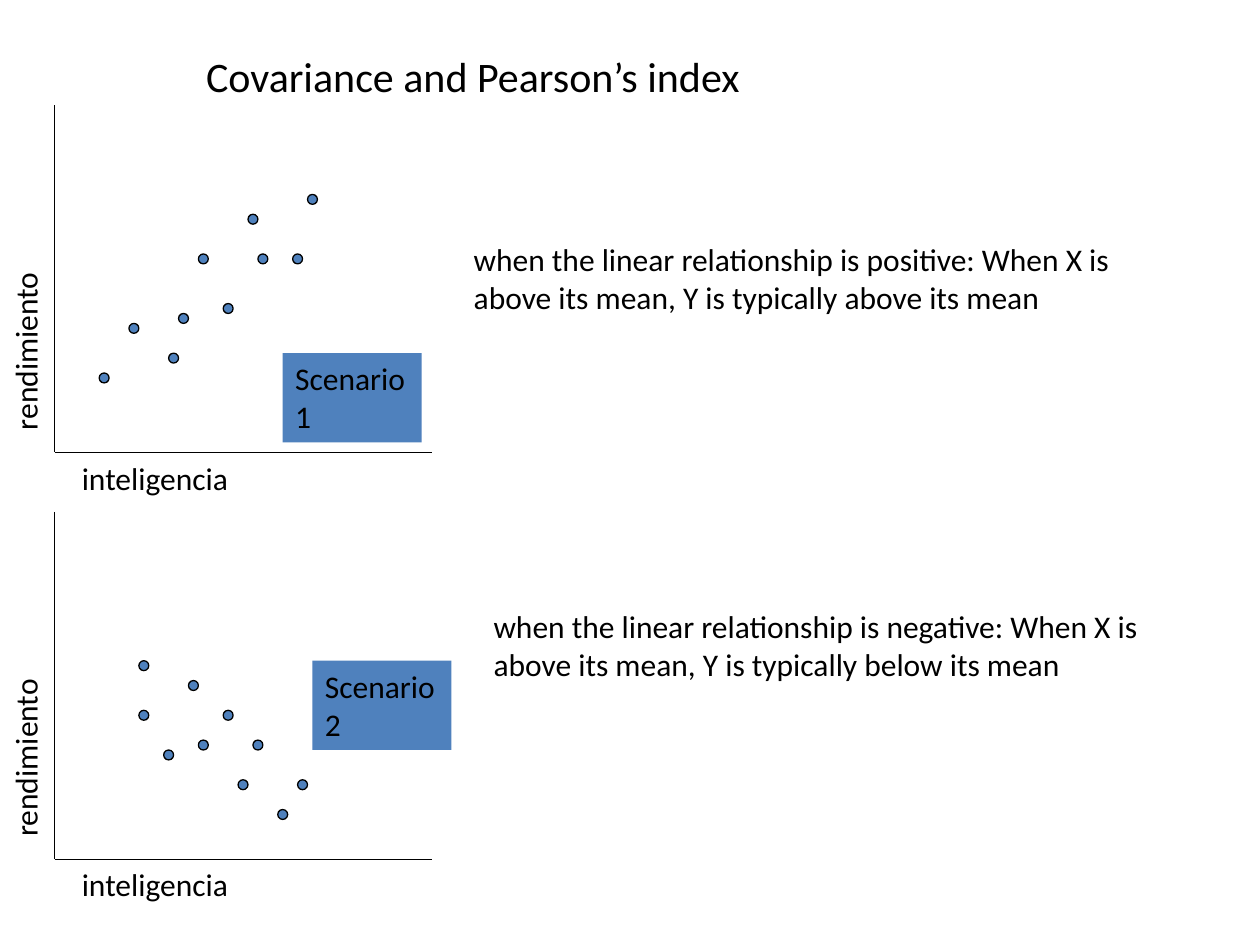
from dataclasses import dataclass
from pptx import Presentation
from pptx.dml.color import RGBColor
from pptx.enum import shapes, text
from pptx.oxml.ns import qn
from pptx import util as u


@dataclass(frozen=True)
class Theme:
    """Colours, font and sizes."""
    font: str = "Calibri"
    head: int = 24
    body: int = 18
    line: float = 0.75
    ink: RGBColor = RGBColor(0, 0, 0)
    fill: RGBColor = RGBColor(0x4F, 0x81, 0xBD)


THEME = Theme()
WIDE, HIGH = u.Inches(10), u.Inches(7.5)
CELL = WIDE / 127
LEFT = 5.5

PLOTS = [
    dict(base=45.6, tag=("Scenario 1", 23, 10), note=(
        "when the linear relationship is positive: When X is above its mean, "
        "Y is typically above its mean", 41, 22),
        dots=[(5, 7.5), (8, 12.5), (12, 9.5), (13, 13.5), (15, 19.5),
              (17.5, 14.5), (20, 23.5), (21, 19.5), (24.5, 19.5), (26, 25.5)]),
    dict(base=86.6, tag=("Scenario 2", 26, 20), note=(
        "when the linear relationship is negative: When X is above its mean, "
        "Y is typically below its mean", 43, 26),
        dots=[(9, 14.5), (9, 19.5), (11.5, 10.5), (14, 17.5), (15, 11.5),
              (17.5, 14.5), (19, 7.5), (20.5, 11.5), (23, 4.5), (25, 7.5)]),
]


def grid(*cells):
    """Turn grid cells into lengths."""
    return [u.Emu(round(c * CELL)) for c in cells]


def write(shape, words, size):
    """Put left-aligned words in a shape."""
    frame = shape.text_frame
    frame.word_wrap = True
    frame.vertical_anchor = text.MSO_ANCHOR.TOP
    par = frame.paragraphs[0]
    par.text = words
    par.alignment = text.PP_ALIGN.LEFT
    par.font.name, par.font.size = THEME.font, u.Pt(size)
    par.font.color.rgb = THEME.ink


def title(slide, words):
    """Place and fill the title."""
    head = slide.shapes.title
    head.left, head.top, head.width, head.height = grid(19.5, 4.5, 100, 6.4)
    write(head, words, THEME.head)


def label(slide, words, x, y, w, h, turn=0):
    """Add a text box."""
    box = slide.shapes.add_textbox(*grid(x, y, w, h))
    box.rotation = turn
    write(box, words, THEME.body)


def solid(slide, kind, x, y, w, h):
    """Add a filled shape without an outline."""
    shape = slide.shapes.add_shape(kind, *grid(x, y, w, h))
    shape.shadow.inherit = False
    shape.fill.solid()
    shape.fill.fore_color.rgb = THEME.fill
    shape.line.fill.background()
    return shape


def dot(slide, x, y):
    """Add an outlined dot centred on a point."""
    shape = solid(slide, shapes.MSO_SHAPE.OVAL, x - 0.5, y - 0.5, 1, 1)
    shape.line.color.rgb = THEME.ink
    shape.line.width = u.Pt(THEME.line)


def axis(slide, *ends):
    """Add a straight axis line."""
    line = slide.shapes.add_connector(shapes.MSO_CONNECTOR.STRAIGHT, *grid(*ends))
    line.line.color.rgb = THEME.ink
    line.line.width = u.Pt(THEME.line)
    props = line._element.spPr
    props.append(props.makeelement(qn("a:effectLst"), {}))


def plot(slide, base, tag, note, dots):
    """Draw one scatter with its labels and note."""
    axis(slide, LEFT, base - 35, LEFT, base)
    axis(slide, LEFT, base, LEFT + 38, base)
    for x, y in dots:
        dot(slide, LEFT + x, base - y)
    label(slide, "rendimiento", LEFT - 20, base - 20.5, 34, 5, 270)
    label(slide, "inteligencia", LEFT + 1.5, base, 32, 5)
    words, x, y = note
    label(slide, words, LEFT + x, base - y, 74, 9)
    words, x, y = tag
    box = solid(slide, shapes.MSO_SHAPE.RECTANGLE, LEFT + x, base - y, 14, 9)
    write(box, words, THEME.body)


def main():
    """Build and save the slide."""
    deck = Presentation()
    deck.slide_width, deck.slide_height = WIDE, HIGH
    slide = deck.slides.add_slide(deck.slide_layouts[5])
    title(slide, "Covariance and Pearson’s index")
    for data in PLOTS:
        plot(slide, **data)
    deck.save("out.pptx")


if __name__ == "__main__":
    main()
